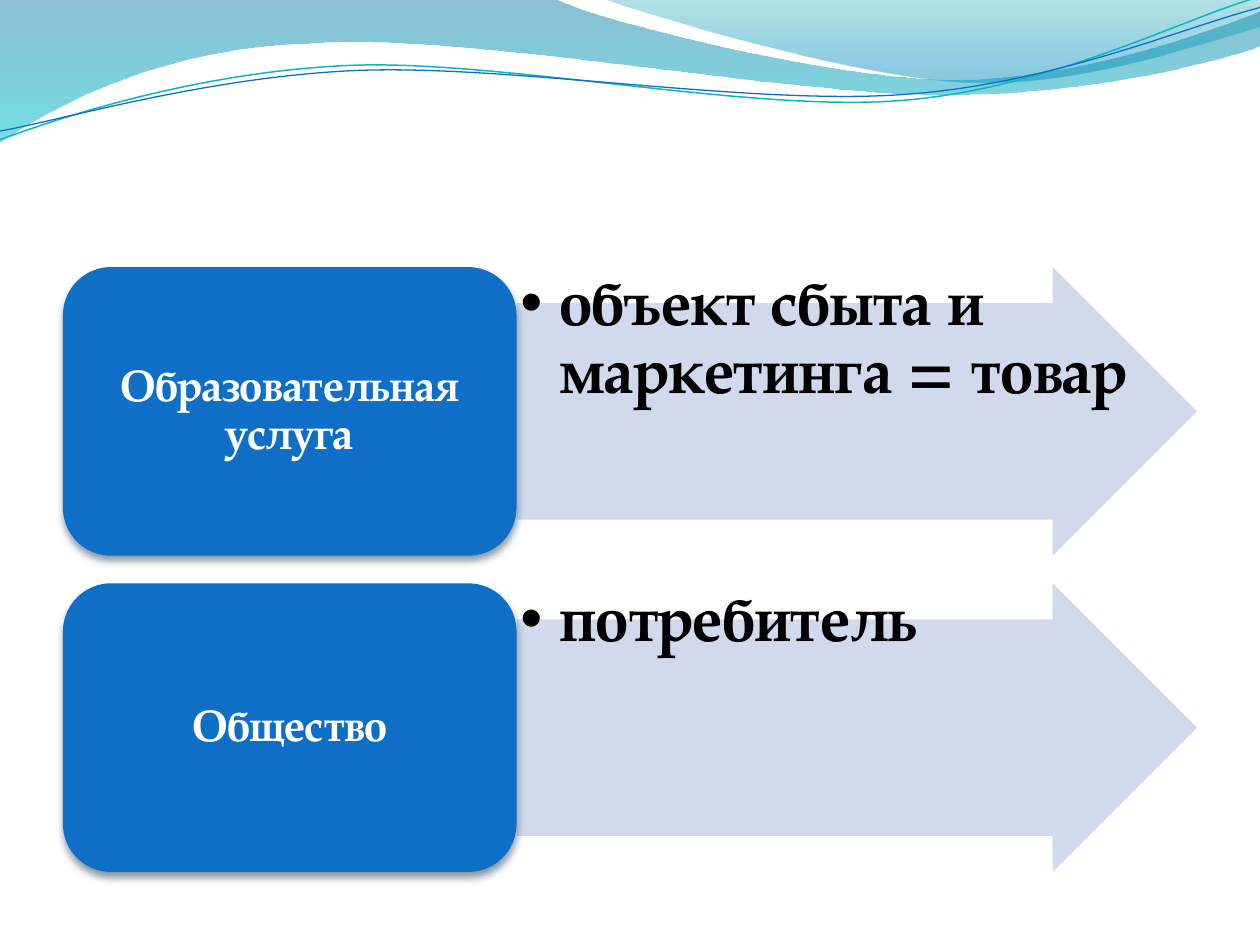
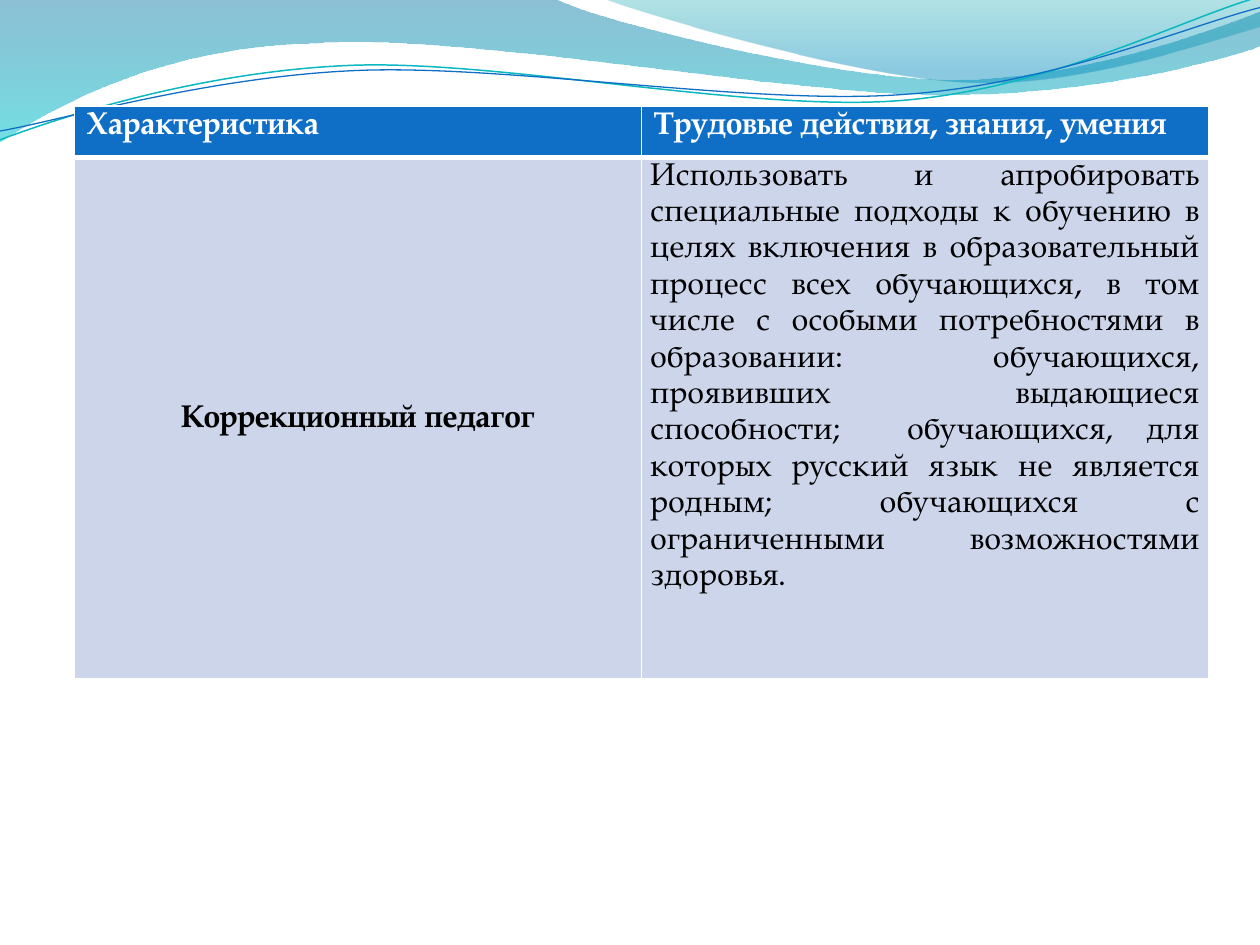
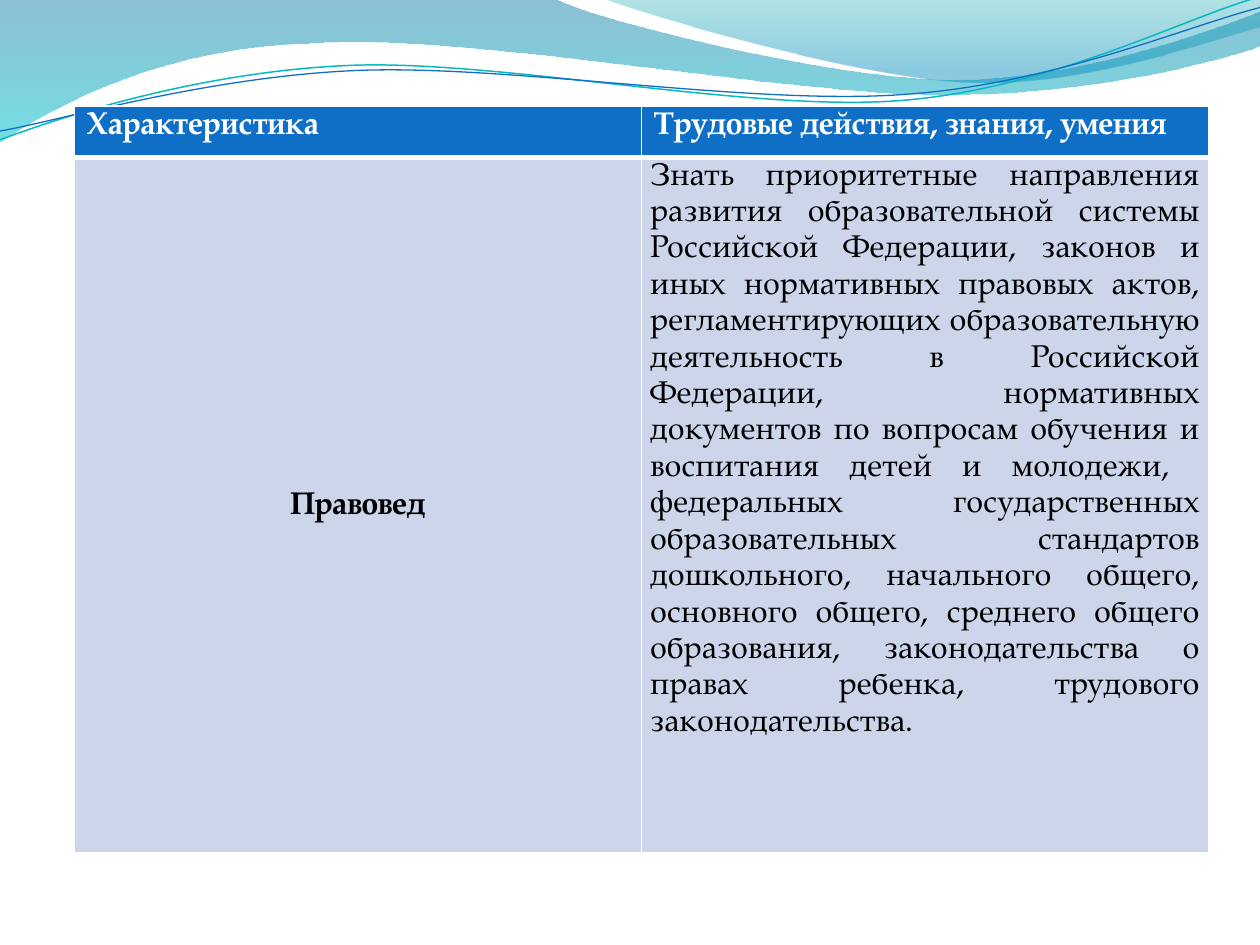
import lxml.etree
import pptx
import pptx.dml.color
import pptx.enum.shapes
import pptx.enum.text
import pptx.oxml
import pptx.oxml.ns
import pptx.util

Inches = pptx.util.Inches
Pt = pptx.util.Pt
Shape = pptx.enum.shapes.MSO_SHAPE
Align = pptx.enum.text.PP_ALIGN
Anchor = pptx.enum.text.MSO_ANCHOR
qn = pptx.oxml.ns.qn

FONT, BULLET_FONT = "TeX Gyre Pagella", "Arial"
BLUE, PALE, WHITE, BLACK = "0F6FC6", "CCD5EA", "FFFFFF", "000000"
SHADOW = "042747"

# Each outline is a start point, then segments: one point for a line, three for a curve.
BANDS = [
    {"start": (0, 0),
     "segments": [[(4.4, -0.01)],
                  [(4.76, 0.17), (6.64, 0.63), (7.58, 0.63)],
                  [(8.53, 0.63), (9.58, 0.26), (10, 0.09)],
                  [(10.01, 0.36)],
                  [(9.83, 0.44), (8.7, 0.76), (7.46, 0.75)],
                  [(6.22, 0.75), (3.82, 0.28), (2.57, 0.34)],
                  [(1.29, 0.36), (0.46, 0.83), (-0.01, 1.13)]],
     "stops": [(0, "0074A1", 45), (1, "00C6CF", 55)]},
    {"start": (4.79, -0.01),
     "segments": [[(5.09, 0.11), (6.82, 0.62), (7.69, 0.65)],
                  [(8.56, 0.69), (9.61, 0.32), (10, 0.21)],
                  [(10, 0)]],
     "stops": [(0, "00A1A9", 30), (0.8, "008BBF", 45)]},
]
WAVES = [
    {"start": (0, 1.11),
     "segments": [[(0.48, 0.93), (1.58, 0.57), (2.77, 0.52)],
                  [(3.95, 0.47), (5.93, 0.89), (7.13, 0.8)],
                  [(8.33, 0.71), (9.38, 0.15), (9.98, -0.02)]],
     "color": "0AB8BF", "width": 0.85},
    {"start": (0, 1.04),
     "segments": [[(0.47, 0.96), (1.64, 0.61), (2.83, 0.56)],
                  [(4.03, 0.51), (5.97, 0.84), (7.17, 0.75)],
                  [(8.36, 0.67), (9.41, 0.21), (10, 0.06)]],
     "color": BLUE, "width": 0.75},
]

ROLES = [("Образовательная услуга", "объект сбыта и маркетинга = товар"),
         ("Общество", "потребитель")]
HEADINGS = ["Характеристика", "Трудовые действия, знания, умения"]
COMPETENCES = [
    ("Коррекционный педагог",
     "Использовать и апробировать специальные подходы к обучению в целях включения "
     "в образовательный процесс всех обучающихся, в том числе с особыми потребностями "
     "в образовании: обучающихся, проявивших выдающиеся способности;  обучающихся, для "
     "которых русский язык не является родным; обучающихся с ограниченными "
     "возможностями здоровья.", 4.84),
    ("Правовед",
     "Знать приоритетные направления развития образовательной системы Российской "
     "Федерации, законов и иных нормативных правовых актов, регламентирующих "
     "образовательную деятельность в Российской Федерации, нормативных документов по "
     "вопросам обучения и воспитания детей и молодежи,  федеральных государственных "
     "образовательных стандартов дошкольного, начального общего, основного общего, "
     "среднего общего образования, законодательства о правах ребенка, трудового "
     "законодательства.", 5.88),
]


def rgb(value):
    return pptx.dml.color.RGBColor.from_string(value)


def apply(target, **values):
    """Set each named attribute on the target."""
    for name, value in values.items():
        setattr(target, name, value)


def add_element(parent, tag, **attributes):
    texts = {name: str(value) for name, value in attributes.items()}
    return lxml.etree.SubElement(parent, qn(tag), texts)


def set_alpha(shape, percents):
    """Give the shape's fill colours, in order, these opacities."""
    for node, percent in zip(shape.element.spPr.iter(qn("a:srgbClr")), percents):
        add_element(node, "a:alpha", val=percent * 1000)


def set_solid(fill, color):
    fill.solid()
    fill.fore_color.rgb = rgb(color)


def write(para, text, size, color, bold=True, **formats):
    apply(para, **formats)
    span = para.add_run()
    span.text = text
    apply(span.font, name=FONT, size=Pt(size), bold=bold)
    span.font.color.rgb = rgb(color)


def draw_outline(slide, start, segments, close):
    """Draw the points as a freeform, then turn each three-point segment into a curve."""
    builder = slide.shapes.build_freeform(*map(Inches, start))
    points = [tuple(map(Inches, point)) for segment in segments for point in segment]
    builder.add_line_segments(points, close=close)
    outline = builder.convert_to_shape()
    outline.shadow.inherit = False

    lines = iter(list(outline.element.spPr.iter(qn("a:lnTo"))))
    for segment in segments:
        first, *others = [next(lines) for _ in segment]
        if others:
            first.tag = qn("a:cubicBezTo")
            for line in others:
                first.append(line[0])
                line.getparent().remove(line)
    return outline


def decorate_master(deck, slide):
    """Draw the top bands and waves, then move them to the master for all slides."""
    outlines = []
    for band in BANDS:
        outline = draw_outline(slide, band["start"], band["segments"], True)
        outline.line.fill.background()
        outline.fill.gradient()
        outline.fill.gradient_angle = 270
        for stop, (position, color, _) in zip(outline.fill.gradient_stops, band["stops"]):
            stop.position = position
            stop.color.rgb = rgb(color)
        set_alpha(outline, [stop[2] for stop in band["stops"]])
        outlines.append(outline)
    for wave in WAVES:
        outline = draw_outline(slide, wave["start"], wave["segments"], False)
        outline.fill.background()
        outline.line.color.rgb = rgb(wave["color"])
        outline.line.width = Pt(wave["width"])
        outlines.append(outline)
    for outline in outlines:
        deck.slide_master.shapes.element.append(outline.element)


def add_block(slide, kind, box, color):
    shape = slide.shapes.add_shape(kind, *map(Inches, box))
    shape.shadow.inherit = False
    shape.line.fill.background()
    set_solid(shape.fill, color)
    return shape


def add_arrow(slide, box, text):
    arrow = add_block(slide, Shape.RIGHT_ARROW, box, PALE)
    arrow.adjustments[0], arrow.adjustments[1] = 0.75, 0.5
    set_alpha(arrow, [90])

    frame = slide.shapes.add_textbox(*map(Inches, box)).text_frame
    inset = Inches(0.03)
    apply(frame, word_wrap=True, margin_left=inset, margin_top=inset,
          margin_right=inset, margin_bottom=inset)
    para = frame.paragraphs[0]
    write(para, text, 36, BLACK, level=1, line_spacing=0.9)
    properties = para._p.get_or_add_pPr()
    properties.set("marL", str(Inches(0.31)))
    properties.set("indent", str(-Inches(0.31)))
    add_element(properties, "a:buFont", typeface=BULLET_FONT)
    add_element(properties, "a:buChar", char="•")


def add_label(slide, box, text):
    label = add_block(slide, Shape.ROUNDED_RECTANGLE, box, BLUE)
    effects = label.element.spPr.find(qn("a:effectLst"))
    shadow = add_element(effects, "a:outerShdw", blurRad=Pt(4.5), dist=Pt(3),
                         dir=90 * 60000, rotWithShape=0)
    color = add_element(shadow, "a:srgbClr", val=SHADOW)
    add_element(color, "a:alpha", val=48000)
    apply(label.text_frame, word_wrap=True, vertical_anchor=Anchor.MIDDLE)
    write(label.text_frame.paragraphs[0], text, 25, WHITE,
          alignment=Align.CENTER, line_spacing=0.9)


def add_roles(slide, box):
    """Stack rows of a label and its arrow, with equal gaps, in the box."""
    left, top, width, height = box
    gap, label_width = 0.22, 3.6
    row_height = (height - gap * (len(ROLES) - 1)) / len(ROLES)
    for index, (label, text) in enumerate(ROLES):
        row_top = top + index * (row_height + gap)
        add_arrow(slide, (left + label_width, row_top, width - label_width, row_height), text)
        add_label(slide, (left, row_top, label_width, row_height), label)


def style_cell(cell, color, bottom_width):
    properties = cell._tc.get_or_add_tcPr()
    for side, width in zip("LRTB", (1, 1, 1, bottom_width)):
        border = add_element(properties, f"a:ln{side}", w=Pt(width))
        fill = add_element(border, "a:solidFill")
        add_element(fill, "a:srgbClr", val=WHITE)
    set_solid(cell.fill, color)


def add_competence_table(slide, box, role, duties):
    """Add a heading row and a body row that grows with its text."""
    holder = slide.shapes.add_table(2, 2, *map(Inches, box))
    table = holder.table
    table.horz_banding = False
    for row in table.rows:
        row.height = Inches(0.41)
    holder.height = Inches(box[3])

    for cell, heading in zip(table.rows[0].cells, HEADINGS):
        style_cell(cell, BLUE, 3)
        write(cell.text_frame.paragraphs[0], heading, 18, WHITE)
    body = [(role, True, Align.CENTER, Anchor.MIDDLE),
            (duties, False, Align.JUSTIFY, Anchor.TOP)]
    for cell, (text, bold, alignment, anchor) in zip(table.rows[1].cells, body):
        style_cell(cell, PALE, 1)
        apply(cell, vertical_anchor=anchor, margin_left=Inches(0.07),
              margin_right=Inches(0.07), margin_top=0, margin_bottom=0)
        write(cell.text_frame.paragraphs[0], text, 18, BLACK, bold,
              alignment=alignment, line_spacing=1.15)


def main():
    deck = pptx.Presentation()
    apply(deck, slide_width=Inches(10), slide_height=Inches(7.5))
    blank = deck.slide_layouts.get_by_name("Blank")

    roles_slide = deck.slides.add_slide(blank)
    decorate_master(deck, roles_slide)
    add_roles(roles_slide, (0.5, 2.12, 9, 4.8))

    for role, duties, height in COMPETENCES:
        slide = deck.slides.add_slide(blank)
        add_competence_table(slide, (0.59, 0.84, 9, height), role, duties)

    deck.save("out.pptx")


if __name__ == "__main__":
    main()
